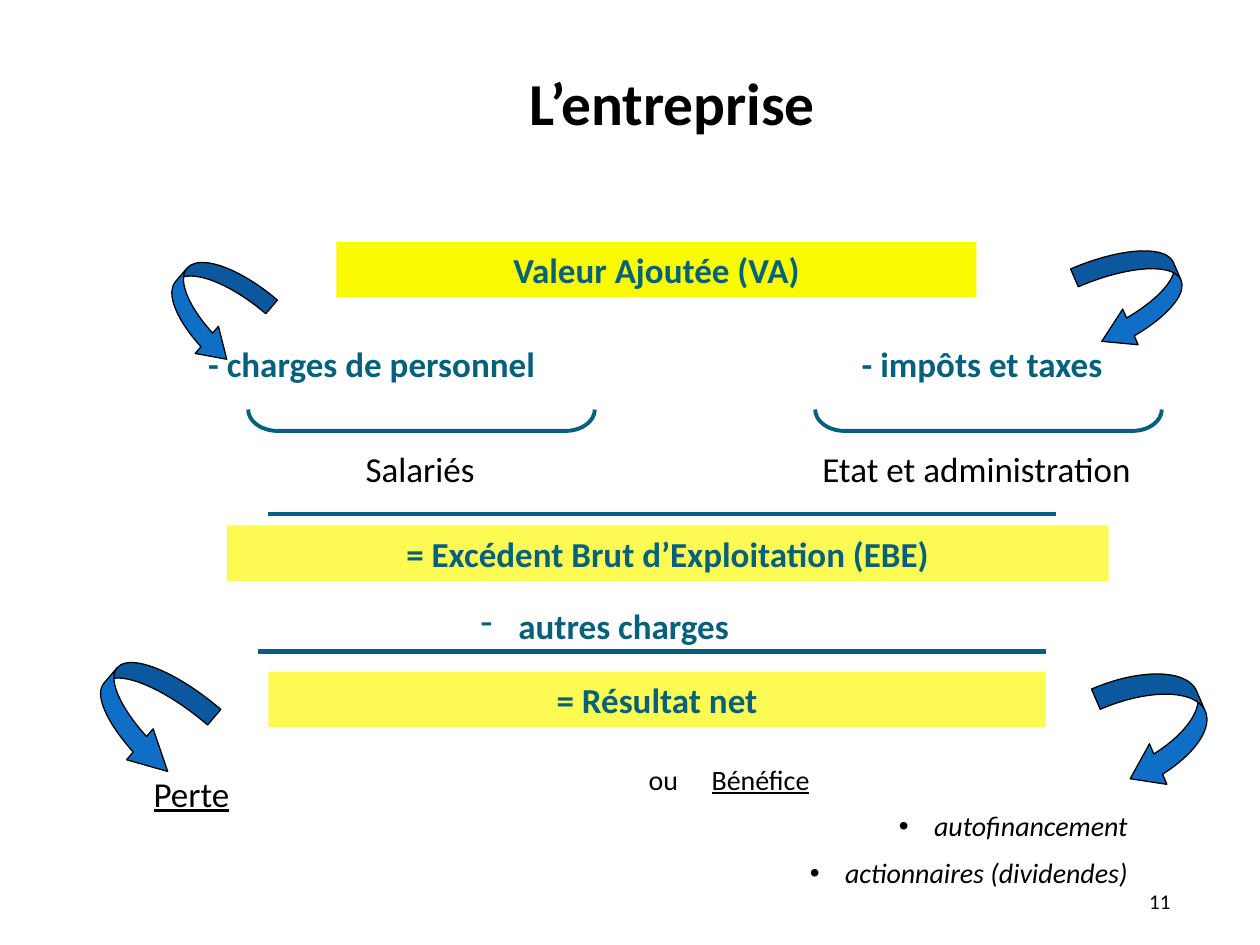
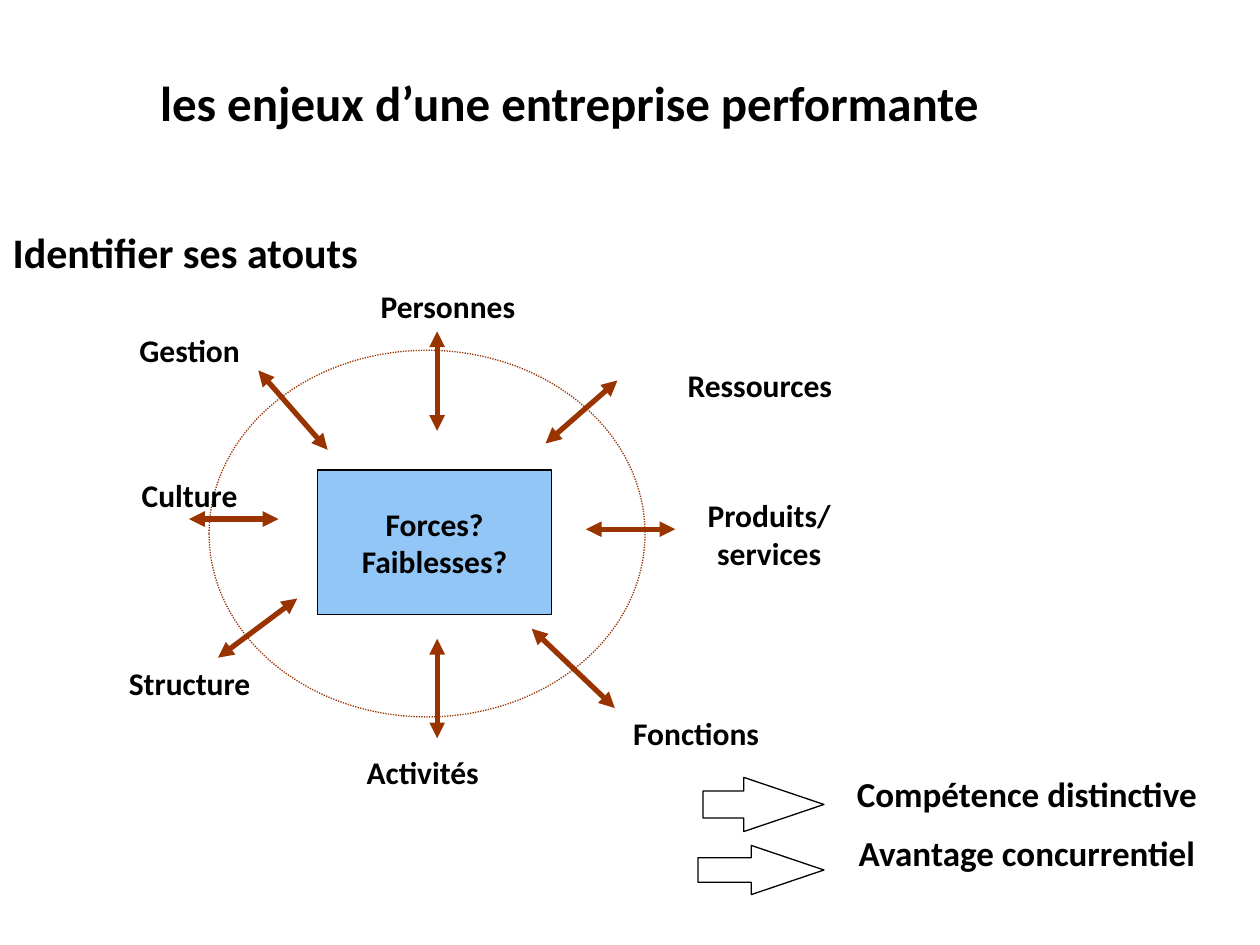
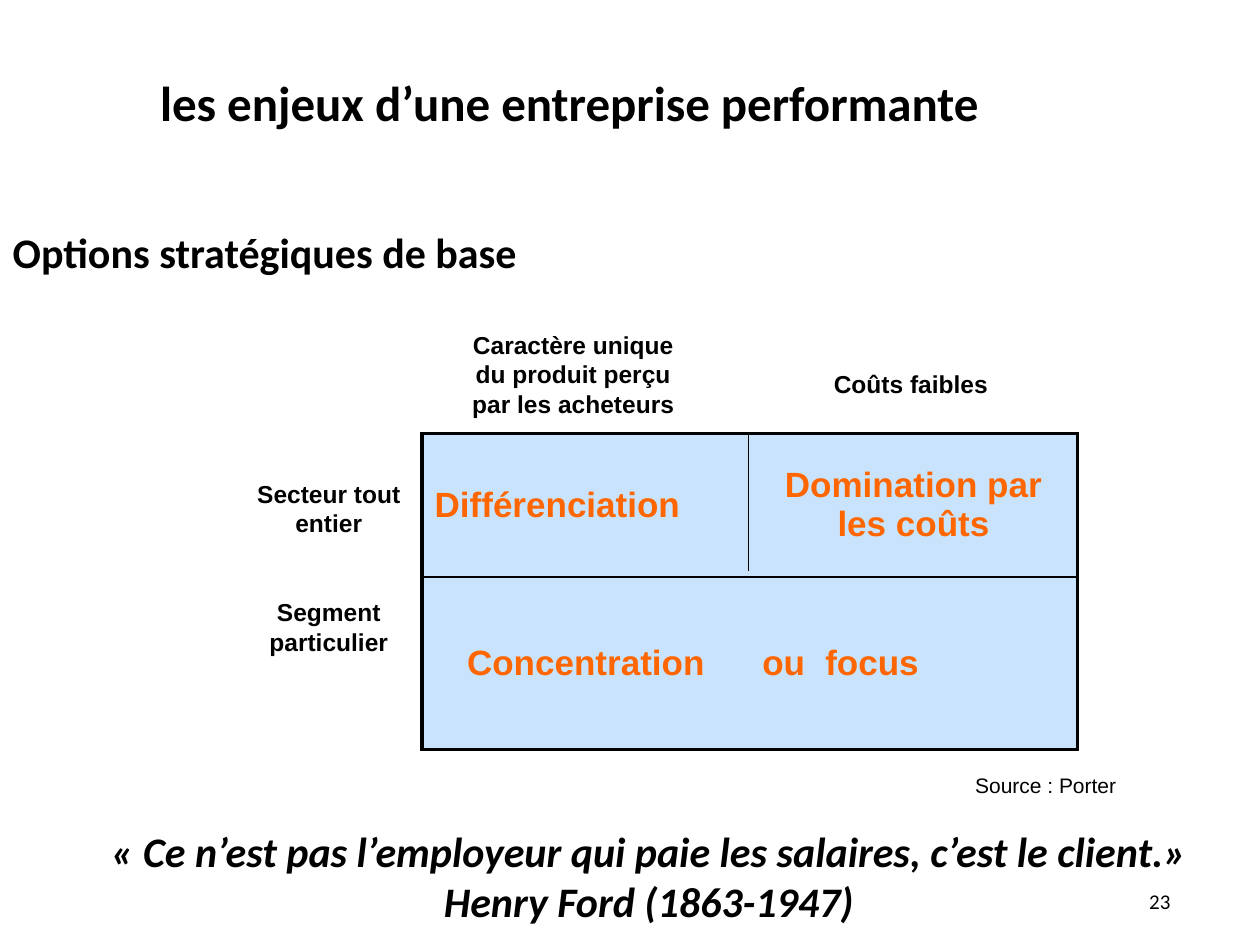
import pptx
import pptx.util
import pptx.dml.color
import pptx.enum.dml
import pptx.enum.shapes
import pptx.enum.text
import pptx.oxml.ns
import lxml.etree

Pt = pptx.util.Pt
RGB = pptx.dml.color.RGBColor.from_string
MSO = pptx.enum.shapes.MSO_SHAPE
ALIGN = pptx.enum.text.PP_ALIGN
MIDDLE = pptx.enum.text.MSO_ANCHOR.MIDDLE
qn = pptx.oxml.ns.qn
SubElement = lxml.etree.SubElement

COLORS = {
    "black": "000000", "teal": "04617B", "blue": "0F6FC6", "box": "91C6F7",
    "cell": "C8E3FB", "yellow": "FAFA02", "pale": "FEFA54",
    "brown": "993300", "orange": "FF6600",
}

prs = pptx.Presentation()
prs.slide_width = pptx.util.Inches(10)
prs.slide_height = pptx.util.Inches(7.5)
G = prs.slide_width / 100  # grid of 100 columns by 75 rows


def add(s, kind, x, y, w, h, fill=None, line=None, width=0.75):
    """Place a preset shape, or a text box when kind is None, on the grid."""
    box = [round(v * G) for v in (x, y, w, h)]
    if kind is None:
        return s.shapes.add_textbox(*box)
    sp = s.shapes.add_shape(kind, *box)
    sp.shadow.inherit = False
    if fill:
        sp.fill.solid()
        sp.fill.fore_color.rgb = RGB(COLORS[fill])
    else:
        sp.fill.background()
    if line:
        sp.line.color.rgb = RGB(COLORS[line])
        sp.line.width = Pt(width)
    else:
        sp.line.fill.background()
    return sp


def write(tf, text, size, color="black", font="Calibri", align=ALIGN.CENTER, gap=0,
          bullet=None, indent=0, tabs=(), **style):
    """Write one paragraph per line, with bullet, tab stops and font."""
    tf.word_wrap = True
    tf.text = text
    for i, p in enumerate(tf.paragraphs):
        pPr = p._p.get_or_add_pPr()
        pPr.set("marL", str(round(indent * G)))
        pPr.set("indent", str(round(-indent * G)))
        p.alignment = align
        p.space_before = Pt(gap if i else 0)
        if bullet:
            SubElement(pPr, qn("a:buChar"), char=bullet)
        else:
            SubElement(pPr, qn("a:buNone"))
        if tabs:
            tabLst = SubElement(pPr, qn("a:tabLst"))
            for t in tabs:
                SubElement(tabLst, qn("a:tab"), pos=str(round(t * G)), algn="l")
        for r in p.runs:
            r.font.size, r.font.name = Pt(size), font
            r.font.color.rgb = RGB(COLORS[color])
            for name, value in style.items():
                setattr(r.font, name, value)


# Shared frame: title, body placeholder and page number
slides = []
for title, size, align, body_box, page in [
    ("L’entreprise", 34, ALIGN.CENTER, (45.5, 60, 45, 14), "11"),
    ("les enjeux d’une entreprise performante", 28, ALIGN.LEFT, (0, 17.5, 85, 5.8), None),
    ("les enjeux d’une entreprise performante", 28, ALIGN.LEFT, (0, 17.5, 85, 5.8), "23"),
]:
    s = prs.slides.add_slide(prs.slide_layouts[1])
    slides.append(s)
    body = s.placeholders[1]
    for sp, box in [(s.shapes.title, (11.7, 2.5, 83.3, 11.2)), (body, body_box)]:
        sp.left, sp.top, sp.width, sp.height = [round(v * G) for v in box]
        sp.text_frame.auto_size = pptx.enum.text.MSO_AUTO_SIZE.NONE
    tf = s.shapes.title.text_frame
    tf.vertical_anchor = MIDDLE
    write(tf, title, size, align=align, bold=True)
    if page:
        tf = add(s, None, 88.3, 69.5, 7.5, 4).text_frame
        tf.vertical_anchor = MIDDLE
        write(tf, page, 12)
value_slide, assets_slide, options_slide = slides

# Slide 1: result bands
s = value_slide
for text, x, y, w, fill in [
    ("Valeur Ajoutée (VA)", 26.7, 19.2, 50.8, "yellow"),
    ("= Excédent Brut d’Exploitation (EBE)", 18, 41.7, 70, "pale"),
    ("= Résultat net", 21.3, 53.3, 61.7, "pale"),
]:
    write(add(s, MSO.RECTANGLE, x, y, w, 4.4, fill).text_frame, text, 20, "teal", bold=True)

# Slide 1: deductions and who receives them
for text, x, y, w, color, style in [
    ("- charges de personnel", 4, 26.7, 51, "teal", {"bold": True}),
    ("- impôts et taxes", 61.3, 26.7, 33.3, "teal", {"bold": True}),
    ("autres charges", 3, 47.5, 90, "teal", {"bold": True, "bullet": "-", "indent": 3}),
    ("Salariés", 24.6, 35, 17.5, "black", {}),
    ("Etat et administration", 59.6, 35, 35.8, "black", {}),
    ("Perte", 10.2, 60.8, 10, "black", {"underline": True}),
]:
    write(add(s, None, x, y, w, 4.4).text_frame, text, 20, color, **style)

for x in (32.6, 77.6):
    sp = add(s, MSO.LEFT_BRACKET, x, 19.6, 1.7, 27.5, line="teal", width=2.25)
    sp.rotation = 270
    sp.adjustments[0] = 1.375

# Slide 1: curved arrows
for kind, x, y, w, h, angle, adj in [
    (MSO.CURVED_RIGHT_ARROW, 13.3, 20.6, 7.1, 7.6, 40.6, (0.2, 0.4, 0.31)),
    (MSO.CURVED_RIGHT_ARROW, 7.5, 52.6, 8.4, 8.1, 40.6, (0.2, 0.4, 0.38)),
    (MSO.CURVED_LEFT_ARROW, 86.2, 19.5, 7.7, 7.8, 336.7, (0.2, 0.4, 0.33)),
    (MSO.CURVED_LEFT_ARROW, 88.2, 52.8, 7.6, 9.5, 336.7, (0.23, 0.46, 0.33)),
]:
    sp = add(s, kind, x, y, w, h, "blue", "black")
    sp.rotation = angle
    for i, a in enumerate(adj):
        sp.adjustments[i] = a

# Slide 1: use of the profit
tf = s.placeholders[1].text_frame
write(tf, "autofinancement\nactionnaires (dividendes)", 16, align=ALIGN.RIGHT,
      gap=7.5, bullet="•", indent=2.8, italic=True)
tf.paragraphs[0].space_before = Pt(0)
tf.paragraphs[0].space_before = Pt(7.5)
tf = add(s, None, 45.5, 60, 45, 4).text_frame
write(tf, "\tou\tBénéfice", 16, align=ALIGN.LEFT, tabs=(11.1, 24))
r = tf.paragraphs[0].runs[0]
r.text = "\tou\t"
r = tf.paragraphs[0].add_run()
r.text = "Bénéfice"
r.font.size, r.font.name, r.font.underline = Pt(16), "Calibri", True
r.font.color.rgb = RGB(COLORS["black"])
body = s.placeholders[1]
body.top, body.height = round(63.7 * G), round(10 * G)
body.text_frame.paragraphs[0].space_before = Pt(0)

# Slide 2: strengths and weaknesses with their sources
s = assets_slide
write(s.placeholders[1].text_frame, "Identifier ses atouts", 24, align=ALIGN.LEFT, bold=True)
sp = add(s, MSO.OVAL, 16.6, 27.8, 34.6, 29.1, line="brown")
sp.line.dash_style = pptx.enum.dml.MSO_LINE.ROUND_DOT
sp = add(s, MSO.RECTANGLE, 25.2, 37.3, 18.6, 11.5, "box", "black")
sp.text_frame.vertical_anchor = MIDDLE
write(sp.text_frame, "Forces?\nFaiblesses?", 18, bold=True)

for text, x, y, w in [
    ("Personnes", 28, 22.3, 15.1),
    ("Gestion", 7.5, 25.8, 15.1),
    ("Culture", 7.5, 37.3, 15.1),
    ("Structure", 7.5, 52.2, 15.1),
    ("Activités", 26, 59.3, 15.1),
    ("Fonctions", 47.7, 56.2, 15.1),
    ("Ressources", 51.2, 28.6, 18.2),
    ("Produits/\vservices", 51.2, 38.9, 19.7),
]:
    write(add(s, None, x, y, w, 4).text_frame, text, 18, bold=True)

# Slide 2: conclusions
write(add(s, None, 65, 60.8, 33, 9.4).text_frame,
      "Compétence distinctive\nAvantage concurrentiel", 20, gap=10, bold=True)
for x, y, w, h in [(55.8, 61.7, 9.6, 4.3), (55.4, 67.1, 10, 3.9)]:
    sp = add(s, MSO.RIGHT_ARROW, x, y, w, h, line="black")
    sp.adjustments[1] = 1.48

# Slide 3: option matrix
s = options_slide
write(s.placeholders[1].text_frame, "Options stratégiques de base", 24,
      align=ALIGN.LEFT, bold=True)
col, rows = 26, (11.4, 13.7)
frame = s.shapes.add_table(2, 2, *[round(v * G) for v in (33.5, 34.4, 2 * col, sum(rows))])
table = frame.table
table.first_row = table.horz_banding = False
style_id = table._tbl.tblPr.find(qn("a:tableStyleId"))
style_id.text = "{2D5ABB26-0587-4C30-8999-92F81FD0307C}"
cells = [
    [("Différenciation", ALIGN.LEFT), ("Domination par les coûts", ALIGN.CENTER)],
    [("Concentration", ALIGN.CENTER), ("ou\tfocus", ALIGN.LEFT)],
]
for i in range(2):
    table.columns[i].width = round(col * G)
    table.rows[i].height = round(rows[i] * G)
    for j, (text, align) in enumerate(cells[i]):
        cell = table.cell(i, j)
        tcPr = cell._tc.get_or_add_tcPr()
        side = "a:lnR" if j else "a:lnL"
        for tag, width in [(side, 2.25), ("a:lnT", 1 if i else 2.25),
                           ("a:lnB", 2.25 if i else 1)]:
            ln = SubElement(tcPr, qn(tag), w=str(Pt(width)))
            SubElement(SubElement(ln, qn("a:solidFill")), qn("a:srgbClr"), val=COLORS["black"])
        cell.fill.solid()
        cell.fill.fore_color.rgb = RGB(COLORS["cell"])
        cell.vertical_anchor = MIDDLE
        write(cell.text_frame, text, 20, "orange", "Arial", align,
              tabs=(8,) if "\t" in text else (), bold=True)

# Slide 3: matrix headings, source and quotation
for text, x, y, w, h, size, bold in [
    ("Caractère unique du produit perçu par les acheteurs", 35.8, 25.7, 19.4, 8.1, 14, True),
    ("Coûts faibles", 62.6, 28.8, 19.4, 3.4, 14, True),
    ("Secteur tout entier", 19.3, 37.5, 13.6, 5.7, 14, True),
    ("Segment particulier", 19.3, 46.9, 13.6, 5.7, 14, True),
    ("Source : Porter", 73.3, 60.8, 19.4, 3, 12, False),
]:
    write(add(s, None, x, y, w, h).text_frame, text, size, font="Arial", bold=bold)
write(add(s, None, 4, 65, 95, 9.1).text_frame,
      "« Ce n’est pas l’employeur qui paie les salaires, c’est le client.»\v"
      "Henry Ford (1863-1947)", 24, bold=True, italic=True)

# Lines of all slides: rules, double arrows and the column divider
lines = [
    (value_slide, (21.3, 40.8, 83.8, 40.8), "teal", 2.5),
    (value_slide, (20.5, 51.7, 83, 51.7), "teal", 2.5),
    (options_slide, (59.4, 34.4, 59.4, 45.3), "black", 0.25),
]
for ends in [
    (34.7, 26.3, 34.7, 34.2), (49, 30.2, 43.3, 35.2), (48.8, 56.2, 42.2, 49.9),
    (34.7, 58.6, 34.7, 50.7), (17.3, 52.2, 23.6, 47.5), (15, 41.2, 22.1, 41.2),
    (20.5, 29.4, 26, 35.7), (53.6, 42, 46.5, 42),
]:
    lines.append((assets_slide, ends, "brown", 3))
for s, ends, color, width in lines:
    cx = s.shapes.add_connector(pptx.enum.shapes.MSO_CONNECTOR.STRAIGHT,
                                *[round(v * G) for v in ends])
    cx.line.color.rgb = RGB(COLORS[color])
    cx.line.width = Pt(width)
    spPr = cx._element.spPr
    if s is assets_slide:
        for tag in ("a:headEnd", "a:tailEnd"):
            SubElement(spPr.find(qn("a:ln")), qn(tag), type="triangle")
    SubElement(spPr, qn("a:effectLst"))

prs.save("out.pptx")
